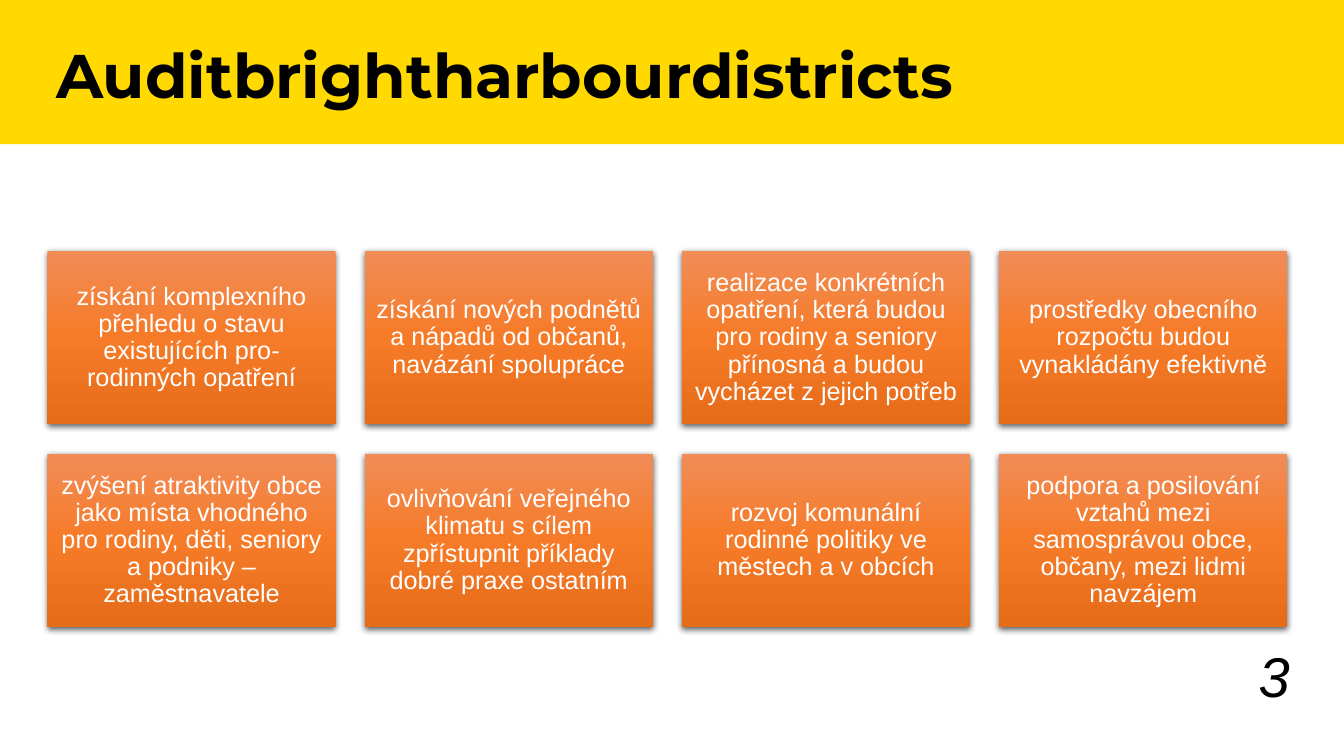
from dataclasses import dataclass

import lxml.etree
import pptx
import pptx.dml.color
import pptx.enum.shapes
import pptx.enum.text
import pptx.oxml.ns
import pptx.util

Inches = pptx.util.Inches
Pt = pptx.util.Pt
qn = pptx.oxml.ns.qn
Align = pptx.enum.text.PP_ALIGN
Anchor = pptx.enum.text.MSO_ANCHOR
RECT = pptx.enum.shapes.MSO_SHAPE.RECTANGLE

# Card grid: edges of the first and last cards set the pitch
COLS = 4
LEFT, LAST = 0.47, 9.91
TOP, DROP = 2.49, 2.01
WIDTH, HEIGHT = 2.86, 1.72
STOPS = [(0, "F18C57"), (50, "F67B28"), (100, "E56C19")]

GOALS = [
    "získání komplexního přehledu o stavu existujících pro-rodinných opatření",
    "získání nových podnětů\na nápadů od občanů, navázání spolupráce",
    "realizace konkrétních opatření, která budou pro rodiny a seniory "
    "přínosná a budou vycházet z jejich potřeb",
    "prostředky obecního rozpočtu budou vynakládány efektivně",
    "zvýšení atraktivity obce jako místa vhodného pro rodiny, děti, seniory "
    "a podniky – zaměstnavatele",
    "ovlivňování veřejného klimatu s cílem zpřístupnit příklady dobré praxe ostatním",
    "rozvoj komunální rodinné politiky ve městech a v obcích",
    "podpora a posilování vztahů mezi samosprávou obce, občany, mezi lidmi navzájem",
]


@dataclass
class Style:
    size: float
    font: str = "Arial"
    color: str = "000000"
    bold: bool = False
    slant: bool = False
    align: Align = Align.LEFT
    anchor: Anchor = Anchor.TOP
    lines: float = 1.0


@dataclass
class Card:
    text: str
    left: float
    top: float


HEAD = Style(44, "Montserrat", bold=True, lines=0.9)
PAGE = Style(40, slant=True, align=Align.RIGHT, anchor=Anchor.BOTTOM)
BODY = Style(18, color="FFFFFF", align=Align.CENTER, anchor=Anchor.MIDDLE, lines=0.9)


def tint(code: str) -> pptx.dml.color.RGBColor:
    return pptx.dml.color.RGBColor.from_string(code)


def write(shape, text: str, style: Style) -> None:
    frame = shape.text_frame
    frame.word_wrap = True
    frame.vertical_anchor = style.anchor
    para = frame.paragraphs[0]
    para.text = text
    para.alignment = style.align
    para.line_spacing = style.lines
    font = para.font
    font.size, font.name = Pt(style.size), style.font
    font.bold, font.italic = style.bold, style.slant
    font.color.rgb = tint(style.color)


def block(slide, left: float, top: float, width: float, height: float):
    shape = slide.shapes.add_shape(
        RECT, Inches(left), Inches(top), Inches(width), Inches(height))
    shape.line.fill.background()
    shape.shadow.inherit = False
    return shape


def label(slide, left: float, top: float, width: float, height: float,
          text: str, style: Style) -> None:
    box = slide.shapes.add_textbox(
        Inches(left), Inches(top), Inches(width), Inches(height))
    write(box, text, style)


def node(parent, tag: str, **attrs: str):
    return lxml.etree.SubElement(parent, qn(tag), attrs)


def shade(shape) -> None:
    """Top-to-bottom gradient with a soft drop shadow."""
    shape.fill.gradient()
    shape.fill.gradient_angle = 270
    props = shape.element.spPr
    stops = props.find(".//" + qn("a:gsLst"))
    for old in list(stops):
        stops.remove(old)
    for place, code in STOPS:
        stop = node(stops, "a:gs", pos=str(place * 1000))
        node(stop, "a:srgbClr", val=code)
    drop = node(props.find(qn("a:effectLst")), "a:outerShdw",
                blurRad=str(Pt(4.5)), dist=str(Pt(1.5)), dir="5400000",
                algn="ctr", rotWithShape="0")
    node(node(drop, "a:srgbClr", val="000000"), "a:alpha", val="63000")


def draw(slide, card: Card) -> None:
    shape = block(slide, card.left, card.top, WIDTH, HEIGHT)
    shade(shape)
    frame = shape.text_frame
    frame.margin_left = frame.margin_right = Inches(0.07)
    frame.margin_top = frame.margin_bottom = Inches(0.07)
    write(shape, card.text, BODY)


def main() -> None:
    deck = pptx.Presentation()
    deck.slide_width, deck.slide_height = Inches(13.33), Inches(7.5)
    slide = deck.slides.add_slide(deck.slide_layouts[6])

    # Header band, title and page number
    band = block(slide, 0, 0, 13.33, 1.43)
    band.fill.solid()
    band.fill.fore_color.rgb = tint("FFD900")
    label(slide, 0.46, 0.4, 12.32, 1.02, "Auditbrightharbourdistricts", HEAD)
    label(slide, 9.89, 6.51, 3, 0.57, "3", PAGE)

    # Goal cards
    pitch = (LAST - LEFT) / (COLS - 1)
    for i, text in enumerate(GOALS):
        row, col = divmod(i, COLS)
        draw(slide, Card(text, LEFT + col * pitch, TOP + row * DROP))

    deck.save("out.pptx")


if __name__ == "__main__":
    main()
